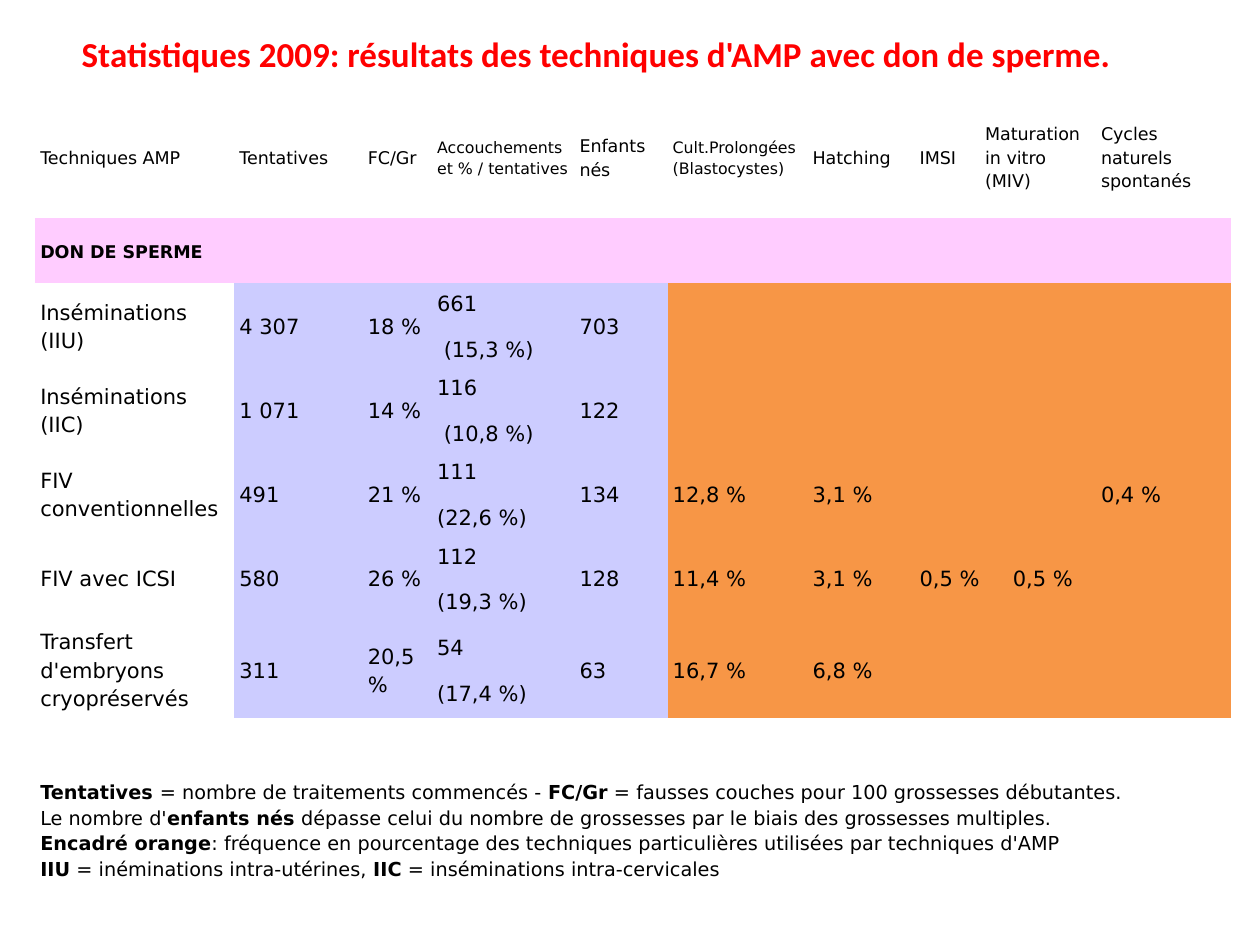
from pptx import Presentation
from pptx.dml.color import RGBColor
from pptx.enum.text import MSO_ANCHOR, MSO_AUTO_SIZE
from pptx.util import Inches, Pt

MIDDLE = MSO_ANCHOR.MIDDLE
GROW = MSO_AUTO_SIZE.SHAPE_TO_FIT_TEXT
PLAIN_TABLE_STYLE = "{2D5ABB26-0587-4C30-8999-92F81FD0307C}"

COLORS = {
    "title": "FF0000",
    "text": "000000",
    "section": "FFCCFF",
    "results": "CCCCFF",
    "special": "F79646",
}
COLUMN_WIDTHS = [1.58, 1.02, 0.55, 1.13, 0.74, 1.11, 0.85, 0.52, 0.22, 0.7, 1.07]
ROW_HEIGHTS = [0.97, 0.52, 0.63, 0.63, 0.63, 0.62, 0.78, 1.77]
MERGES = [(0, 8, 9), (1, 0, 10), (7, 0, 10)] + [(row, 7, 8) for row in range(2, 7)]

HEADERS = [
    "Techniques AMP", "Tentatives", "FC/Gr", "Accouchements\vet % / tentatives",
    "Enfants nés", "Cult.Prolongées\v(Blastocystes)", "Hatching", "IMSI",
    "Maturation \vin vitro (MIV)", "", "Cycles naturels\vspontanés",
]
SMALL_HEADERS = (3, 5)
RESULTS = [
    ["Inséminations (IIU)", "4 307", "18 %", "661\n (15,3 %)", "703"],
    ["Inséminations (IIC)", "1 071", "14 %", "116\n (10,8 %)", "122"],
    ["FIV conventionnelles", "491", "21 %", "111\n(22,6 %)", "134",
     "12,8 %", "3,1 %", "", "", "", "0,4 %"],
    ["FIV avec ICSI", "580", "26 %", "112\n(19,3 %)", "128",
     "11,4 %", "3,1 %", "0,5 %", "", "0,5 %"],
    ["Transfert d'embryons\vcryopréservés", "311", "20,5 %", "54\n(17,4 %)", "63",
     "16,7 %", "6,8 %"],
]
LEGEND = [
    [("Tentatives ", True), ("= nombre de traitements commencés - ", False),
     ("FC/Gr", True), (" = fausses couches pour 100 grossesses débutantes.", False)],
    [("Le nombre d'", False), ("enfants nés", True),
     (" dépasse celui du nombre de grossesses par le biais des grossesses multiples.", False)],
    [("Encadré orange", True),
     (": fréquence en pourcentage des techniques particulières utilisées par techniques d'AMP",
      False)],
    [("IIU", True), (" = inéminations intra-utérines, ", False),
     ("IIC", True), (" = inséminations intra-cervicales", False)],
]


class SlideBuilder:
    """Holds the style and the current slide, and adds its elements."""

    title_font = "Calibri"
    table_font = "DejaVu Sans"

    def __init__(self, slide):
        self.slide = slide

    def format_span(self, span, font, size, color, bold=False):
        span.font.name = font
        span.font.size = Pt(size)
        span.font.bold = bold
        span.font.color.rgb = RGBColor.from_string(COLORS[color])

    def title(self, text, left, top, width, height):
        box = self.slide.shapes.add_textbox(
            Inches(left), Inches(top), Inches(width), Inches(height))
        frame = box.text_frame
        frame.word_wrap = True
        frame.auto_size = GROW
        frame.text = text
        self.format_span(frame.paragraphs[0].runs[0], self.title_font, 20, "title", True)

    def table(self, left, top):
        frame = self.slide.shapes.add_table(
            len(ROW_HEIGHTS), len(COLUMN_WIDTHS), Inches(left), Inches(top),
            Inches(sum(COLUMN_WIDTHS)), Inches(sum(ROW_HEIGHTS)))
        table = frame.table
        table.first_row = table.horz_banding = False
        table._tbl.tblPr[0].text = PLAIN_TABLE_STYLE
        for column, width in zip(table.columns, COLUMN_WIDTHS):
            column.width = Inches(width)
        for row, height in zip(table.rows, ROW_HEIGHTS):
            row.height = Inches(height)
        for row, first, last in MERGES:
            table.cell(row, first).merge(table.cell(row, last))
        return table

    def cell(self, cell, text="", size=12, fill=None, bold=False):
        cell.vertical_anchor = MIDDLE
        cell.margin_left = cell.margin_right = Inches(0.04)
        cell.margin_top = cell.margin_bottom = Inches(0.04)
        if fill:
            cell.fill.solid()
            cell.fill.fore_color.rgb = RGBColor.from_string(COLORS[fill])
        else:
            cell.fill.background()
        cell.text_frame.text = text
        for para in cell.text_frame.paragraphs:
            para.line_spacing = 1.15
            para.space_after = Pt(10)
            for span in para.runs:
                self.format_span(span, self.table_font, size, "text", bold)

    def legend(self, cell, lines):
        self.cell(cell)
        para = cell.text_frame.paragraphs[0]
        for index, line in enumerate(lines):
            if index:
                para.add_line_break()
            for text, bold in line:
                span = para.add_run()
                span.text = text
                self.format_span(span, self.table_font, 11, "text", bold)


def result_fill(column):
    if column == 0:
        return None
    return "results" if column < 5 else "special"


def main():
    deck = Presentation()
    deck.slide_width, deck.slide_height = Inches(10), Inches(7.5)
    builder = SlideBuilder(deck.slides.add_slide(deck.slide_layouts[6]))

    table = builder.table(0.28, 0.76)
    for column, text in enumerate(HEADERS):
        builder.cell(table.cell(0, column), text, 9 if column in SMALL_HEADERS else 10)
    builder.cell(table.cell(1, 0), "DON DE SPERME", 10, "section", True)
    for row, values in enumerate(RESULTS, start=2):
        for column in range(len(COLUMN_WIDTHS)):
            text = values[column] if column < len(values) else ""
            builder.cell(table.cell(row, column), text, fill=result_fill(column))
    builder.legend(table.cell(7, 0), LEGEND)

    builder.title("Statistiques 2009: résultats des techniques d'AMP avec don de sperme.",
                  0.55, 0.21, 9.45, 0.44)
    deck.save("out.pptx")


if __name__ == "__main__":
    main()
